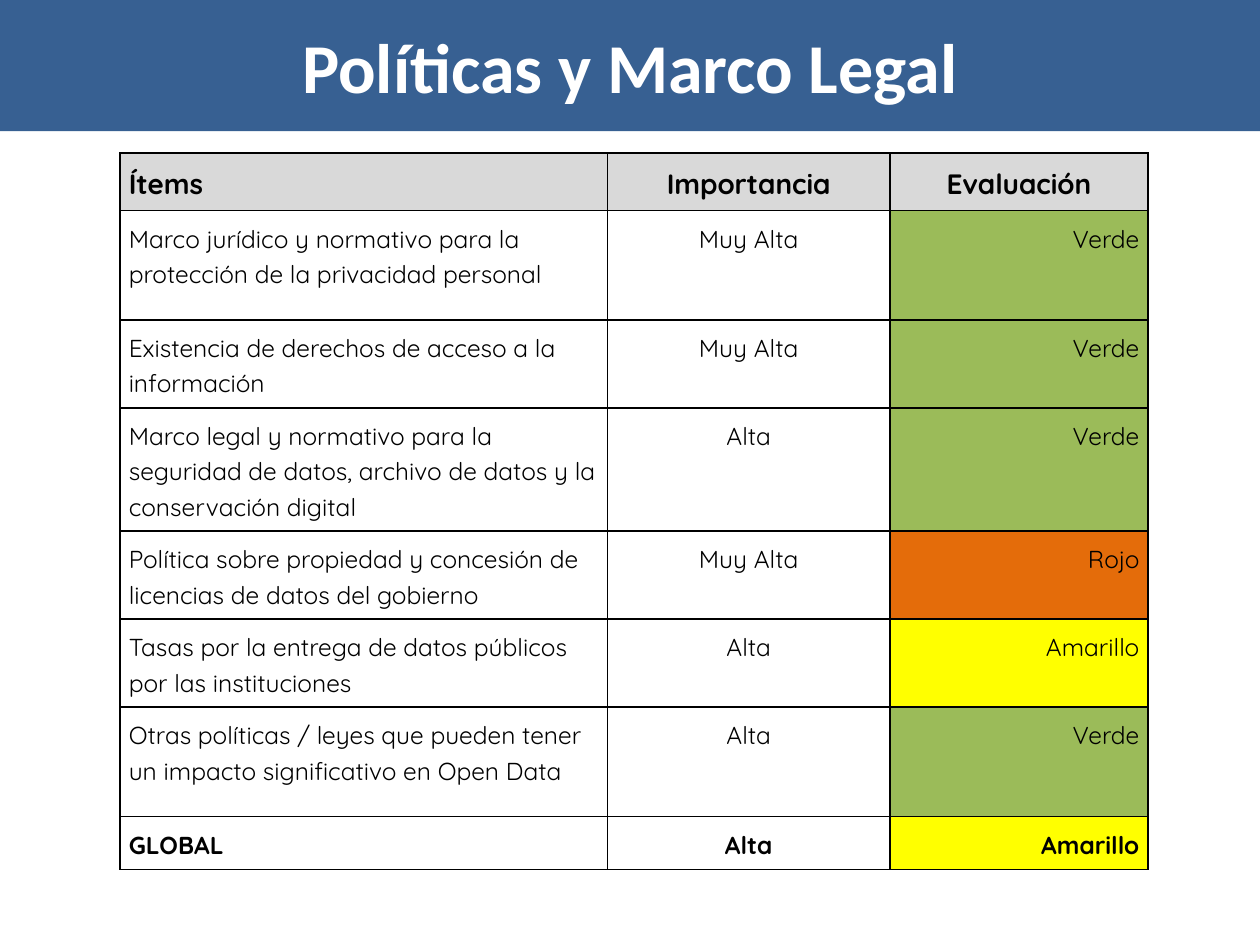
from lxml.etree import SubElement
from pptx import Presentation
from pptx.dml.color import RGBColor
from pptx.enum.text import MSO_ANCHOR, MSO_AUTO_SIZE, PP_ALIGN
from pptx.oxml.ns import qn
from pptx.util import Pt

GREEN, ORANGE, YELLOW = "9BBB59", "E46C0A", "FFFF00"
RATING_COLORS = {"Verde": GREEN, "Rojo": ORANGE, "Amarillo": YELLOW}
HEADINGS = ("Ítems", "Importancia", "Evaluación")
ITEMS = [
    ("Marco jurídico y normativo para la protección de la privacidad personal", "Muy Alta", "Verde"),
    ("Existencia de derechos de acceso a la información", "Muy Alta", "Verde"),
    ("Marco legal y normativo para la seguridad de datos, archivo de datos y la conservación digital",
     "Alta", "Verde"),
    ("Política sobre propiedad y concesión de licencias de datos del gobierno", "Muy Alta", "Rojo"),
    ("Tasas por la entrega de datos públicos por las instituciones", "Alta", "Amarillo"),
    ("Otras políticas / leyes que pueden tener un impacto significativo en Open Data", "Alta", "Verde"),
]
OVERALL = ("GLOBAL", "Alta", "Amarillo")
COLUMN_WIDTHS = (278.6, 161.3, 147.6)
ROW_HEIGHTS = (30.2, 62.6, 49.7, 62.6, 49.7, 49.7, 62.6, 30.2)
HEADING_ALIGNMENTS = (PP_ALIGN.LEFT, PP_ALIGN.CENTER, PP_ALIGN.CENTER)
BODY_ALIGNMENTS = (PP_ALIGN.LEFT, PP_ALIGN.CENTER, PP_ALIGN.RIGHT)
HEADING_FONT = {"name": "Quicksand", "size": Pt(16), "bold": True}
ITEM_FONT = {"name": "Quicksand", "size": Pt(14), "bold": False}
OVERALL_FONT = {"name": "Quicksand", "size": Pt(14), "bold": True}
TITLE_FONT = {"name": "Calibri", "size": Pt(40), "bold": True}


def color(value):
    return RGBColor.from_string(value)


def apply_format(target, values):
    for name, value in values.items():
        setattr(target, name, value)


def set_fill(target, value):
    if value is None:
        target.fill.background()
    else:
        target.fill.solid()
        target.fill.fore_color.rgb = color(value)


def write_paragraph(text_frame, text, font, font_color, paragraph_format):
    text_frame.text = text
    paragraph = text_frame.paragraphs[0]
    apply_format(paragraph, paragraph_format)
    run_font = paragraph.runs[0].font
    apply_format(run_font, font)
    run_font.color.rgb = color(font_color)


def add_borders(cell):
    properties = cell._tc.get_or_add_tcPr()
    for side in ("lnL", "lnR", "lnT", "lnB"):
        line = SubElement(properties, qn(f"a:{side}"), w=str(Pt(1)))
        line_fill = SubElement(line, qn("a:solidFill"))
        SubElement(line_fill, qn("a:srgbClr"), val="000000")


def add_title(slide, text):
    title = slide.shapes.title
    apply_format(title, {"left": Pt(0), "top": Pt(0), "width": Pt(720), "height": Pt(75)})
    set_fill(title, "376092")
    apply_format(title.text_frame, {
        "vertical_anchor": MSO_ANCHOR.MIDDLE, "word_wrap": True, "auto_size": MSO_AUTO_SIZE.NONE})
    write_paragraph(title.text_frame, text, TITLE_FONT, "FFFFFF", {"alignment": PP_ALIGN.CENTER})


def fill_row(table, row_index, texts, font, alignments, fills):
    for column_index, (text, alignment, fill) in enumerate(zip(texts, alignments, fills)):
        cell = table.cell(row_index, column_index)
        margins = ("margin_left", "margin_right", "margin_top", "margin_bottom")
        apply_format(cell, dict.fromkeys(margins, Pt(5)))
        add_borders(cell)
        set_fill(cell, fill)
        write_paragraph(cell.text_frame, text, font, "000000", {
            "alignment": alignment, "line_spacing": 1.15, "space_after": Pt(10)})


def add_assessment_table(slide):
    frame = slide.shapes.add_table(
        len(ROW_HEIGHTS), len(COLUMN_WIDTHS), Pt(68.6), Pt(87.3),
        Pt(sum(COLUMN_WIDTHS)), Pt(sum(ROW_HEIGHTS)))
    table = frame.table
    apply_format(table, {"first_row": False, "horz_banding": False})
    for column, width in zip(table.columns, COLUMN_WIDTHS):
        column.width = Pt(width)
    for row, height in zip(table.rows, ROW_HEIGHTS):
        row.height = Pt(height)
    fill_row(table, 0, HEADINGS, HEADING_FONT, HEADING_ALIGNMENTS, ("D9D9D9",) * 3)
    for row_index, texts in enumerate([*ITEMS, OVERALL], start=1):
        font = OVERALL_FONT if texts is OVERALL else ITEM_FONT
        fills = (None, None, RATING_COLORS[texts[-1]])
        fill_row(table, row_index, texts, font, BODY_ALIGNMENTS, fills)


def main():
    presentation = Presentation()
    apply_format(presentation, {"slide_width": Pt(720), "slide_height": Pt(540)})
    slide = presentation.slides.add_slide(presentation.slide_layouts[5])
    add_title(slide, "Políticas y Marco Legal")
    add_assessment_table(slide)
    presentation.save("out.pptx")


if __name__ == "__main__":
    main()
